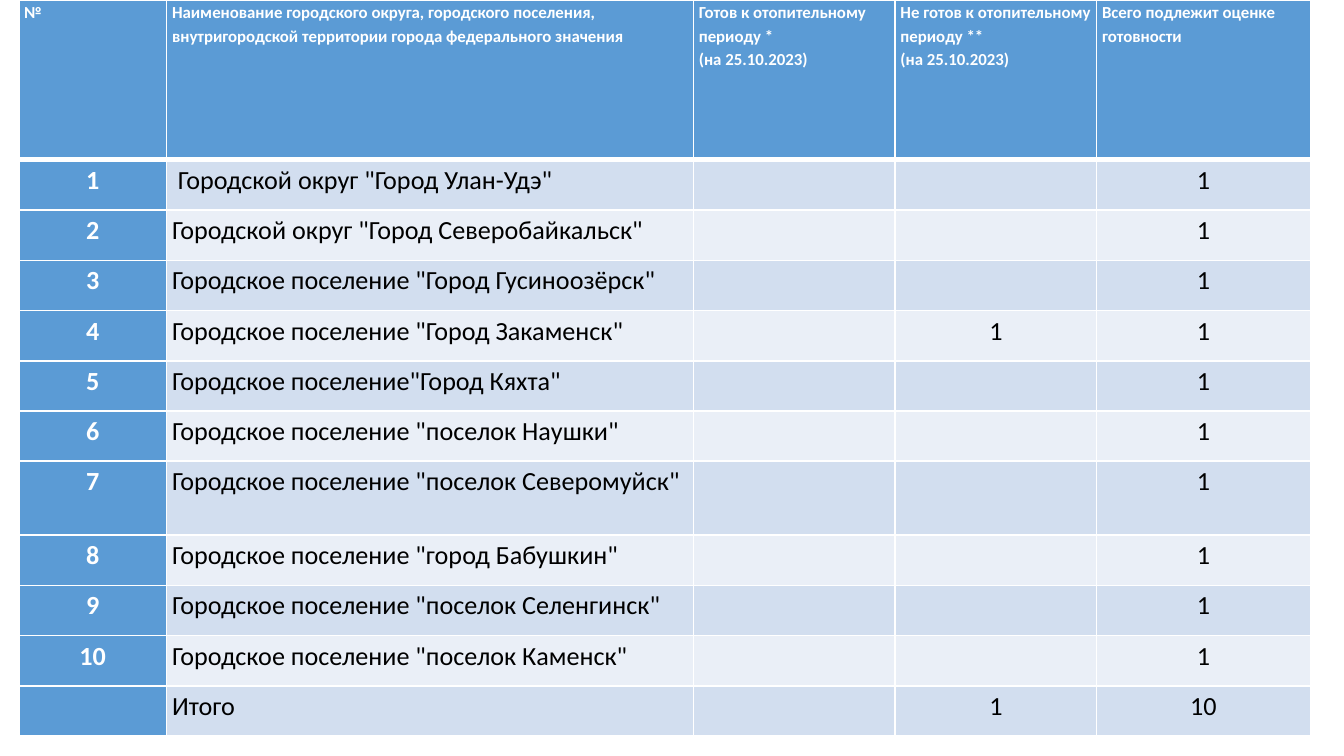
from lxml.etree import SubElement
from pptx import Presentation
from pptx.dml.color import RGBColor as Color
from pptx.enum.text import PP_ALIGN as Align
from pptx.oxml.ns import qn
from pptx.util import Inches, Pt

COLORS = {
    "accent": "5B9BD5",
    "odd": "D2DEEF",
    "even": "EAEFF7",
    "white": "FFFFFF",
    "black": "000000",
}

# Widescreen page and table grid in inches
PAGE_WIDTH = 10
PAGE_HEIGHT = PAGE_WIDTH * 9 / 16
LEFT, TOP, HEIGHT = 0.14, 0, 5.48
COLUMNS = [1.1, 3.92, 1.5, 1.5, 1.59]
HEADER_HEIGHT, TALL_HEIGHT, TALL_ROW = 1.19, 0.55, 7

HEADER = [
    "№",
    "Наименование городского округа, городского поселения, "
    "внутригородской территории города федерального значения",
    "Готов к отопительному периоду *\n(на 25.10.2023)",
    "Не готов к отопительному периоду **\n(на 25.10.2023)",
    "Всего подлежит оценке готовности",
]
TOWNS = [
    ' Городской округ "Город Улан-Удэ"',
    'Городской округ "Город Северобайкальск"',
    'Городское поселение "Город Гусиноозёрск"',
    'Городское поселение "Город Закаменск"',
    'Городское поселение"Город Кяхта"',
    'Городское поселение "поселок Наушки"',
    'Городское поселение "поселок Северомуйск"',
    'Городское поселение "город Бабушкин"',
    'Городское поселение "поселок Селенгинск"',
    'Городское поселение "поселок Каменск"',
]
NOT_READY = {4}  # numbers of the towns that are not ready

HEADER_FORMAT = {"size": Pt(9), "bold": True, "name": "Calibri"}
NUMBER_FORMAT = {"size": Pt(14), "bold": True, "name": "Calibri"}
BODY_FORMAT = {"size": Pt(14), "bold": False, "name": "Calibri"}
CELL_MARGINS = {
    "margin_left": Inches(0.04),
    "margin_right": Inches(0.04),
    "margin_top": 0,
    "margin_bottom": 0,
}


def set_attributes(target, values):
    for name, value in values.items():
        setattr(target, name, value)


def color(name):
    return Color.from_string(COLORS[name])


def table_rows():
    """Header, one row for each town, and the totals."""
    towns = [
        [str(number), town, "", "1" if number in NOT_READY else "", "1"]
        for number, town in enumerate(TOWNS, start=1)
    ]
    totals = ["", "Итого", "", str(len(NOT_READY)), str(len(TOWNS))]
    return [HEADER, *towns, totals]


def add_borders(cell, widths):
    properties = cell._tc.get_or_add_tcPr()
    for side, width in widths.items():
        line = SubElement(properties, qn(f"a:ln{side}"), w=str(Pt(width)))
        fill = SubElement(line, qn("a:solidFill"))
        SubElement(fill, qn("a:srgbClr"), val=COLORS["white"])


def fill_cell(cell, text, fill, ink, font, align):
    set_attributes(cell, CELL_MARGINS)
    cell.fill.solid()
    cell.fill.fore_color.rgb = color(fill)
    cell.text_frame.text = text
    for para in cell.text_frame.paragraphs:
        set_attributes(para, {"alignment": align, "line_spacing": 1.15})
        for span in para.runs:
            set_attributes(span.font, font)
            span.font.color.rgb = color(ink)


def style_for(row, column):
    """Fill, ink, font and alignment by place in the table."""
    if row == 0:
        return "accent", "white", HEADER_FORMAT, Align.LEFT
    if column == 0:
        return "accent", "white", NUMBER_FORMAT, Align.CENTER
    band = "odd" if row % 2 else "even"
    align = Align.LEFT if column == 1 else Align.CENTER
    return band, "black", BODY_FORMAT, align


def add_readiness_table(page):
    rows = table_rows()
    table = page.shapes.add_table(
        len(rows), len(COLUMNS), Inches(LEFT), Inches(TOP),
        Inches(sum(COLUMNS)), Inches(HEIGHT),
    ).table

    # Column widths and row heights
    for column, width in zip(table.columns, COLUMNS):
        column.width = Inches(width)
    special = {0: HEADER_HEIGHT, TALL_ROW: TALL_HEIGHT}
    regular = (HEIGHT - sum(special.values())) / (len(rows) - len(special))
    for index, row in enumerate(table.rows):
        row.height = Inches(special.get(index, regular))

    # Cells, with a thick line under the header
    for row, texts in enumerate(rows):
        widths = {"L": 1, "R": 1, "T": 3 if row == 1 else 1, "B": 3 if row == 0 else 1}
        for column, text in enumerate(texts):
            cell = table.cell(row, column)
            add_borders(cell, widths)
            fill_cell(cell, text, *style_for(row, column))


def main():
    deck = Presentation()
    size = {"slide_width": Inches(PAGE_WIDTH), "slide_height": Inches(PAGE_HEIGHT)}
    set_attributes(deck, size)
    page = deck.slides.add_slide(deck.slide_layouts[6])
    add_readiness_table(page)
    deck.save("out.pptx")


if __name__ == "__main__":
    main()
